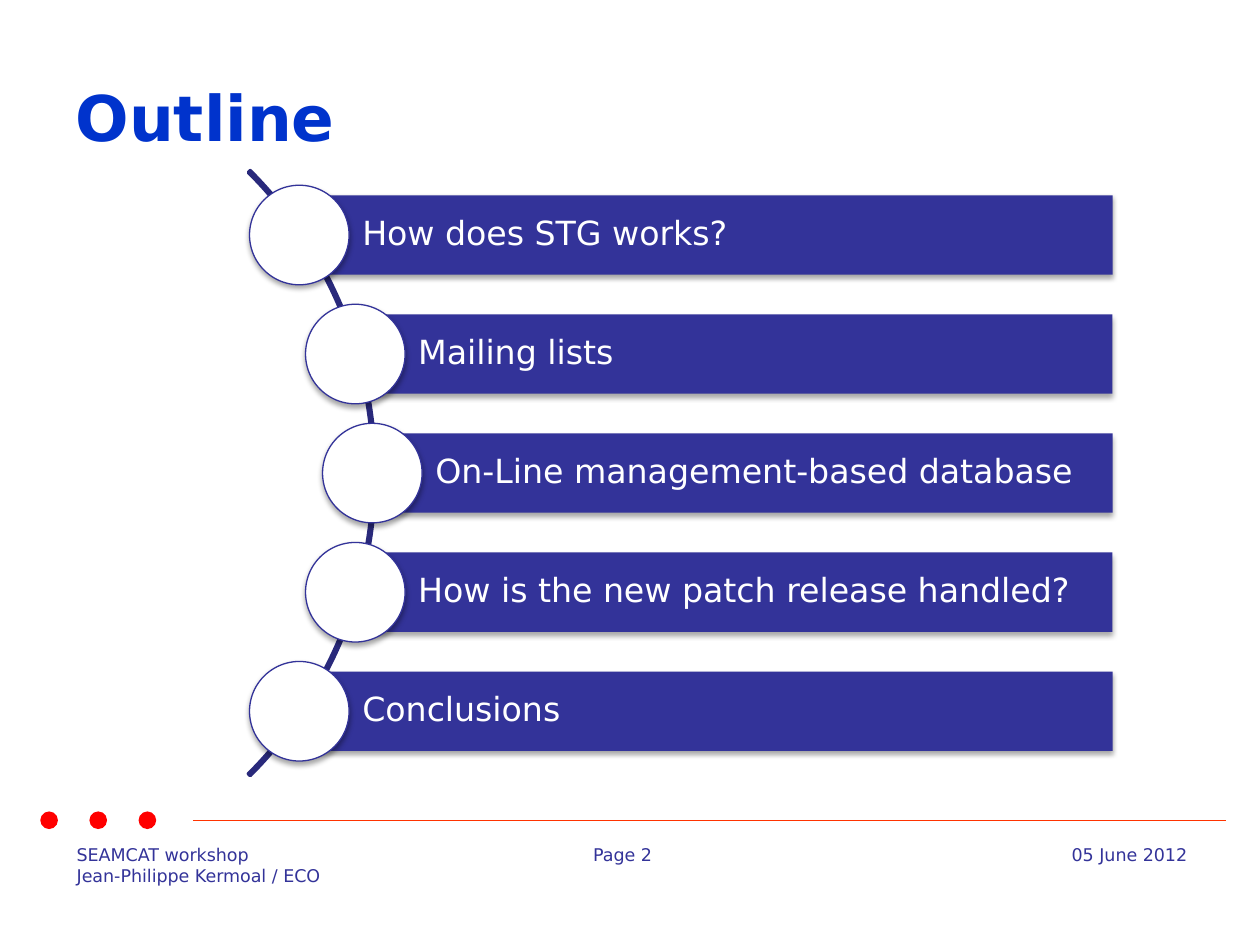
from dataclasses import dataclass
from math import sqrt

from lxml.etree import SubElement
from pptx import Presentation
from pptx.dml.color import RGBColor
from pptx.enum.shapes import MSO_CONNECTOR, MSO_SHAPE
from pptx.enum.text import MSO_ANCHOR, PP_ALIGN
from pptx.oxml.ns import qn
from pptx.util import Inches, Pt


@dataclass(frozen=True)
class Theme:
    font: str = "DejaVu Sans"
    title_size: int = 36
    item_size: int = 19
    footer_size: int = 10
    title: str = "0033CC"
    main: str = "333399"
    arc: str = "29297B"
    dot: str = "FF0000"
    rule: str = "FF3300"
    white: str = "FFFFFF"
    shadow: str = "000000"


THEME = Theme()

ITEMS = [
    "How does STG works?",
    "Mailing lists",
    "On-Line management-based database",
    "How is the new patch release handled?",
    "Conclusions",
]

# Geometry of the arc and the items along it, in inches
ARC_CENTER_X, ARC_CENTER_Y = -0.415, 3.755
ARC_RADIUS = 3.395
ITEM_RADIUS = 3.37
ITEM_STEP = 0.945
BAR_RIGHT, BAR_HEIGHT = 8.83, 0.63
CIRCLE_SIZE = 0.79


def style_text(paragraph, size, color, bold=False, alignment=PP_ALIGN.LEFT):
    paragraph.alignment = alignment
    font = paragraph.font
    font.name = THEME.font
    font.size = Pt(size)
    font.bold = bold
    font.color.rgb = RGBColor.from_string(color)


def add_shape(slide, kind, left, top, width, height, fill=None, line=None, line_width=0.75):
    shape = slide.shapes.add_shape(
        kind, Inches(left), Inches(top), Inches(width), Inches(height)
    )
    shape.shadow.inherit = False
    if fill:
        shape.fill.solid()
        shape.fill.fore_color.rgb = RGBColor.from_string(fill)
    else:
        shape.fill.background()
    if line:
        shape.line.color.rgb = RGBColor.from_string(line)
        shape.line.width = Pt(line_width)
    else:
        shape.line.fill.background()
    return shape


def add_shadow(shape):
    effects = shape._element.spPr.find(qn("a:effectLst"))
    shadow = SubElement(
        effects, qn("a:outerShdw"), blurRad=str(Pt(3.1)), dist=str(Pt(1.8)),
        dir="5400000", rotWithShape="0",
    )
    color = SubElement(shadow, qn("a:srgbClr"), val=THEME.shadow)
    SubElement(color, qn("a:alpha"), val="35000")


def add_title(slide, text):
    title = slide.shapes.title
    title.left, title.top = Inches(0.5), Inches(0.3)
    title.width, title.height = Inches(9), Inches(1.25)
    title.text_frame.text = text
    title.text_frame.vertical_anchor = MSO_ANCHOR.MIDDLE
    style_text(title.text_frame.paragraphs[0], THEME.title_size, THEME.title, bold=True)


def add_arc(slide):
    arc = add_shape(
        slide, MSO_SHAPE.BLOCK_ARC, ARC_CENTER_X - ARC_RADIUS, ARC_CENTER_Y - ARC_RADIUS,
        2 * ARC_RADIUS, 2 * ARC_RADIUS, line=THEME.arc, line_width=2,
    )
    # Start angle, end angle and thickness
    for index, value in enumerate((189, 27, 0.003)):
        arc.adjustments[index] = value


def add_item(slide, offset, text):
    center_x = ARC_CENTER_X + sqrt(ITEM_RADIUS**2 - offset**2)
    center_y = ARC_CENTER_Y + offset

    bar = add_shape(
        slide, MSO_SHAPE.RECTANGLE, center_x, center_y - BAR_HEIGHT / 2,
        BAR_RIGHT - center_x, BAR_HEIGHT, fill=THEME.main,
    )
    add_shadow(bar)
    frame = bar.text_frame
    frame.word_wrap = True
    frame.vertical_anchor = MSO_ANCHOR.MIDDLE
    frame.margin_left = Inches(0.5)
    frame.margin_right = frame.margin_top = frame.margin_bottom = Inches(0.05)
    frame.text = text
    paragraph = frame.paragraphs[0]
    paragraph.line_spacing = 0.9
    style_text(paragraph, THEME.item_size, THEME.white)

    circle = add_shape(
        slide, MSO_SHAPE.OVAL, center_x - CIRCLE_SIZE / 2, center_y - CIRCLE_SIZE / 2,
        CIRCLE_SIZE, CIRCLE_SIZE, fill=THEME.white, line=THEME.main,
    )
    add_shadow(circle)


def add_footer_text(slide, left, width, height, lines, alignment=PP_ALIGN.LEFT, wrap=False):
    box = slide.shapes.add_textbox(
        Inches(left), Inches(6.65), Inches(width), Inches(height)
    )
    frame = box.text_frame
    frame.word_wrap = wrap
    frame.text = "\n".join(lines)
    for paragraph in frame.paragraphs:
        style_text(paragraph, THEME.footer_size, THEME.main, alignment=alignment)


def add_footer(slide):
    add_footer_text(slide, 0.51, 2.21, 0.43, ["SEAMCAT workshop", "Jean-Philippe Kermoal / ECO"])
    add_footer_text(slide, 4.61, 0.82, 0.27, ["Page 2"])
    add_footer_text(slide, 7.73, 1.79, 0.27, ["05 June 2012"], PP_ALIGN.RIGHT, wrap=True)

    # Rule and dots
    rule = slide.shapes.add_connector(
        MSO_CONNECTOR.STRAIGHT, Inches(1.53), Inches(6.51), Inches(9.73), Inches(6.51)
    )
    rule.line.color.rgb = RGBColor.from_string(THEME.rule)
    rule.line.width = Pt(0.75)
    SubElement(rule._element.spPr, qn("a:effectLst"))
    for index in range(3):
        add_shape(slide, MSO_SHAPE.OVAL, 0.32 + 0.39 * index, 6.44, 0.14, 0.14, fill=THEME.dot)


def main():
    presentation = Presentation()
    presentation.slide_width, presentation.slide_height = Inches(10), Inches(7.5)
    slide = presentation.slides.add_slide(presentation.slide_layouts[5])

    add_footer(slide)
    add_title(slide, "Outline")
    add_arc(slide)
    for index, text in enumerate(ITEMS):
        add_item(slide, (index - len(ITEMS) // 2) * ITEM_STEP, text)

    presentation.save("out.pptx")


if __name__ == "__main__":
    main()
